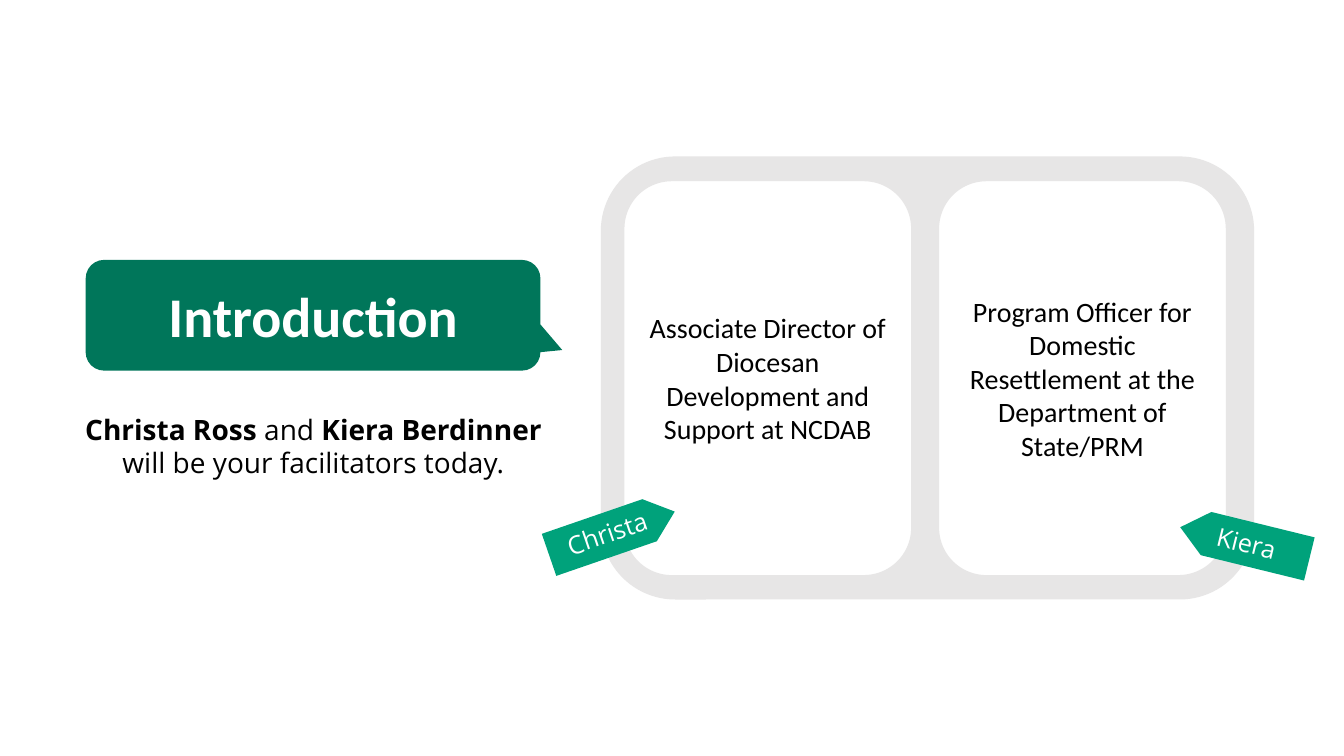
"""Build the introduction slide that presents the two facilitators."""
from pptx import Presentation
from pptx.dml.color import RGBColor
from pptx.enum.shapes import MSO_SHAPE
from pptx.enum.text import MSO_ANCHOR, MSO_AUTO_SIZE, PP_ALIGN
from pptx.util import Cm, Pt

COLORS = {
    "black": "000000",
    "white": "FFFFFF",
    "gray": "E7E6E6",
    "dark green": "00765A",
    "green": "00A27B",
}

presentation = Presentation()
presentation.slide_width = Cm(33.87)
presentation.slide_height = Cm(19.05)
slide = presentation.slides.add_slide(presentation.slide_layouts[6])


def add_block(kind, left, top, width, height, fill, line=None, rotation=0):
    shape = slide.shapes.add_shape(kind, Cm(left), Cm(top), Cm(width), Cm(height))
    shape.shadow.inherit = False
    shape.rotation = rotation
    shape.fill.solid()
    shape.fill.fore_color.rgb = RGBColor.from_string(COLORS[fill])
    if line:
        shape.line.color.rgb = RGBColor.from_string(COLORS[line])
        shape.line.width = Pt(1)
    else:
        shape.line.fill.background()
    return shape


def write(shape, *texts, size=20, font="Calibri", color="black", bold=(False,),
          align=PP_ALIGN.CENTER, anchor=MSO_ANCHOR.MIDDLE, grow=False):
    frame = shape.text_frame
    frame.word_wrap = True
    frame.vertical_anchor = anchor
    if grow:
        frame.auto_size = MSO_AUTO_SIZE.SHAPE_TO_FIT_TEXT
    paragraph = frame.paragraphs[0]
    paragraph.alignment = align
    for text, is_bold in zip(texts, bold):
        run = paragraph.add_run()
        run.text = text
        run.font.name = font
        run.font.size = Pt(size)
        run.font.bold = is_bold
        run.font.color.rgb = RGBColor.from_string(COLORS[color])


facilitators = slide.shapes.add_textbox(Cm(1.45), Cm(10.26), Cm(12.9), Cm(1.96))
write(facilitators, "Christa Ross ", "and ", "Kiera Berdinner",
      " will be your facilitators today.", font="Open Sans",
      bold=(True, False, True, False), anchor=MSO_ANCHOR.TOP, grow=True)

add_block(MSO_SHAPE.ROUNDED_RECTANGLE, 15.16, 3.96, 16.43, 11.13, "gray", "gray")

roles = [
    (15.72, "Associate Director of Diocesan Development and Support at NCDAB"),
    (23.65, "Program Officer for Domestic Resettlement at the Department of State/PRM"),
]
for left, role in roles:
    card = add_block(MSO_SHAPE.ROUNDED_RECTANGLE, left, 4.55, 7.26, 9.96, "white", "gray")
    write(card, role)

title = add_block(MSO_SHAPE.ROUNDED_RECTANGULAR_CALLOUT, 2.16, 6.55, 11.46, 2.79, "dark green")
for index, value in enumerate((0.548, 0.314, 0.167)):
    title.adjustments[index] = value
write(title, "Introduction", size=40, color="white", bold=(True,))

name_tags = [
    ("Christa", 14.86, 11.76, 251, 14, 12.9, 341.1),
    ("Kiera", 30.81, 12.01, 103.8, 30.4, 13.26, 13.8),
]
for name, tag_left, tag_top, tag_turn, left, top, turn in name_tags:
    add_block(MSO_SHAPE.FLOWCHART_OFFPAGE_CONNECTOR, tag_left, tag_top, 1.12, 3.35,
              "green", rotation=tag_turn)
    label = slide.shapes.add_textbox(Cm(left), Cm(top), Cm(2.77), Cm(1.02))
    label.rotation = turn
    write(label, name, size=18, font="Open Sans", color="white",
          align=PP_ALIGN.LEFT, anchor=MSO_ANCHOR.TOP, grow=True)

presentation.save("out.pptx")
